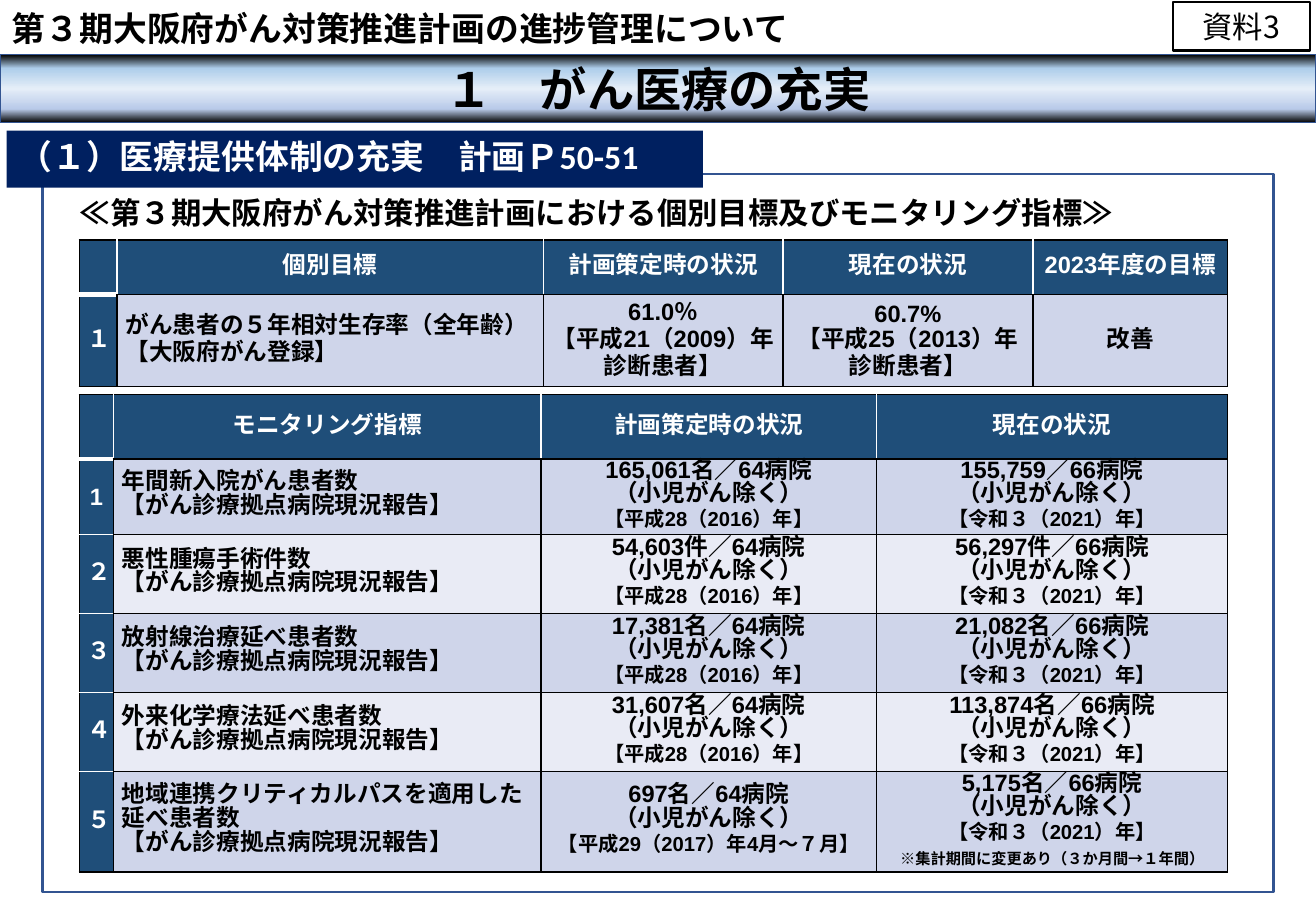
"""Build the slide on progress of the Osaka cancer control plan: goals and monitoring indicators."""
from lxml.etree import SubElement
from pptx import Presentation
from pptx.dml.color import RGBColor
from pptx.enum.shapes import MSO_SHAPE
from pptx.enum.text import MSO_ANCHOR, PP_ALIGN
from pptx.oxml.ns import qn
from pptx.util import Inches, Pt

BLACK, WHITE, NAVY, STEEL = "000000", "FFFFFF", "002060", "1F4E79"
BANDS = ["CFD5EA", "E9EBF5"]
SHEEN = [(0, BLACK), (20, "ADCDEA"), (50, "E5EEF8"), (80, "B9CAE9"), (100, BLACK)]
CJK = "Noto Sans CJK JP"
LEFT, CENTER = PP_ALIGN.LEFT, PP_ALIGN.CENTER
TOP, MIDDLE = MSO_ANCHOR.TOP, MSO_ANCHOR.MIDDLE


def paint(fill, colour):
    fill.solid()
    fill.fore_color.rgb = RGBColor.from_string(colour)


def write(frame, lines, sizes, colour, align, spacing, **formats):
    frame.word_wrap = True
    for index, (line, size) in enumerate(zip(lines, sizes)):
        para = frame.add_paragraph() if index else frame.paragraphs[0]
        para.text = line
        para.alignment = align
        para.line_spacing = spacing
        for span in para.runs:
            for name, value in {"size": Pt(size), **formats}.items():
                setattr(span.font, name, value)
            paint(span.font.fill, colour)
            SubElement(span._r.get_or_add_rPr(), qn("a:ea"), typeface=CJK)


deck = Presentation()
deck.slide_width, deck.slide_height = Inches(10.83), Inches(7.5)
column, row = deck.slide_width / 100, deck.slide_height / 100
page = deck.slides.add_slide(deck.slide_layouts[6])

boxes = [
    ((3.23, 19.13, 93.54, 78.8), WHITE, "325491", 1.25, "", 18, CJK, BLACK, False, LEFT, TOP, None),
    ((0, 6, 100, 7.47), SHEEN, "325491", 1, "１　がん医療の充実",
     28, CJK, BLACK, True, CENTER, MIDDLE, None),
    ((0.5, 14.33, 52.91, 6.27), NAVY, None, 0, "（１）医療提供体制の充実　計画Ｐ50-51",
     20, "Calibri", WHITE, True, LEFT, MIDDLE, Pt(20)),
    ((5.17, 20.67, 82.09, 5.33), None, None, 0,
     "≪第３期大阪府がん対策推進計画における個別目標及びモニタリング指標≫",
     18, "Calibri", BLACK, True, LEFT, TOP, None),
    ((89.1, 0.22, 10.43, 5.33), WHITE, BLACK, 1.25, "資料3",
     18, CJK, BLACK, False, CENTER, TOP, None),
    ((0, 0.18, 77.01, 5.87), None, None, 0, "第３期大阪府がん対策推進計画の進捗管理について",
     20, "Calibri", BLACK, True, LEFT, TOP, None),
]
for place, fill, outline, weight, text, size, font, colour, bold, align, anchor, spacing in boxes:
    area = [int(share * unit) for share, unit in zip(place, (column, row) * 2)]
    if fill:
        box = page.shapes.add_shape(MSO_SHAPE.RECTANGLE, *area)
        box.shadow.inherit = False
        if outline:
            paint(box.line.fill, outline)
            box.line.width = Pt(weight)
        else:
            box.line.fill.background()
    else:
        box = page.shapes.add_textbox(*area)
    if fill is SHEEN:
        box.fill.gradient()
        box.fill.gradient_angle = 270
        stops = box._element.spPr.find(".//" + qn("a:gsLst"))
        stops.clear()
        for share, shade in SHEEN:
            stop = SubElement(stops, qn("a:gs"), pos=str(share * 1000))
            SubElement(stop, qn("a:srgbClr"), val=shade)
    elif fill:
        paint(box.fill, fill)
    if text:
        box.text_frame.vertical_anchor = anchor
        write(box.text_frame, [text], [size], colour, align, spacing, name=font, bold=bold)

goals = [
    ["", ["個別目標"], ["計画策定時の状況"], ["現在の状況"], ["2023年度の目標"]],
    [["１"], ["がん患者の５年相対生存率（全年齢）", "【大阪府がん登録】"],
     ["61.0％", "【平成21（2009）年診断患者】"], ["60.7%", "【平成25（2013）年診断患者】"], ["改善"]],
]
indicators = [
    ("1", "年間新入院がん患者数", "165,061名", "155,759"),
    ("２", "悪性腫瘍手術件数", "54,603件", "56,297件"),
    ("３", "放射線治療延べ患者数", "17,381名", "21,082名"),
    ("４", "外来化学療法延べ患者数", "31,607名", "113,874名"),
    ("５", "地域連携クリティカルパスを適用した延べ患者数", "697名", "5,175名"),
]
report, scope = "【がん診療拠点病院現況報告】", "（小児がん除く）"
monitors = [["", ["モニタリング指標"], ["計画策定時の状況"], ["現在の状況"]]]
for number, topic, before, now in indicators:
    monitors.append([[number], [f"{topic}\v{report}"],
                     [f"{before}／64病院", scope, "【平成28（2016）年】"],
                     [f"{now}／66病院", scope, "【令和３（2021）年】"]])
monitors[-1][1] = [indicators[-1][1], report]
monitors[-1][2][2] = "【平成29（2017）年4月～７月】"
monitors[-1][3].append("※集計期間に変更あり（３か月間→１年間）")

tables = [
    (26.33, [2.86, 32.41, 18.19, 19.02, 14.77], [6, 10.13], goals, 16),
    (43.33, [2.59, 32.5, 25.48, 26.69], [7.07, 8.27, 8.67, 8.67, 8.67, 11.07], monitors, 14),
]
for top, widths, heights, content, leading in tables:
    area = [int(6.03 * column), int(top * row), int(sum(widths) * column), int(sum(heights) * row)]
    table = page.shapes.add_table(len(heights), len(widths), *area).table
    for index, width in enumerate(widths):
        table.columns[index].width = int(width * column)
    for r, height in enumerate(heights):
        table.rows[r].height = int(height * row)
        for c, lines in enumerate(content[r]):
            cell = table.cell(r, c)
            header, label = r == 0, c == 0
            edges = dict.fromkeys(["lnL", "lnR", "lnT", "lnB"], (BLACK, 1))
            if header:
                edges["lnL"] = (BLACK if label else WHITE, 1)
                edges["lnR"] = (BLACK if c == len(widths) - 1 else WHITE, 1)
                edges["lnB"] = (WHITE, 3) if label else (BLACK, 1)
            elif label:
                edges["lnT"] = (WHITE, 1)
                edges["lnB"] = (BLACK if r == len(heights) - 1 else WHITE, 1)
            for side, (colour, weight) in edges.items():
                edge = SubElement(cell._tc.get_or_add_tcPr(), qn(f"a:{side}"), w=str(Pt(weight)))
                SubElement(SubElement(edge, qn("a:solidFill")), qn("a:srgbClr"), val=colour)
            paint(cell.fill, STEEL if header or label else BANDS[(r - 1) % 2])
            cell.vertical_anchor = MIDDLE
            cell.margin_left = cell.margin_right = Inches(0.07)
            cell.margin_top = cell.margin_bottom = 0
            if lines:
                write(cell.text_frame, lines, [14, 14, 12, 9], WHITE if header or label else BLACK,
                      LEFT if c == 1 and not header else CENTER,
                      Pt(16 if header or label else leading), name="Arial", bold=True)

deck.save("out.pptx")
